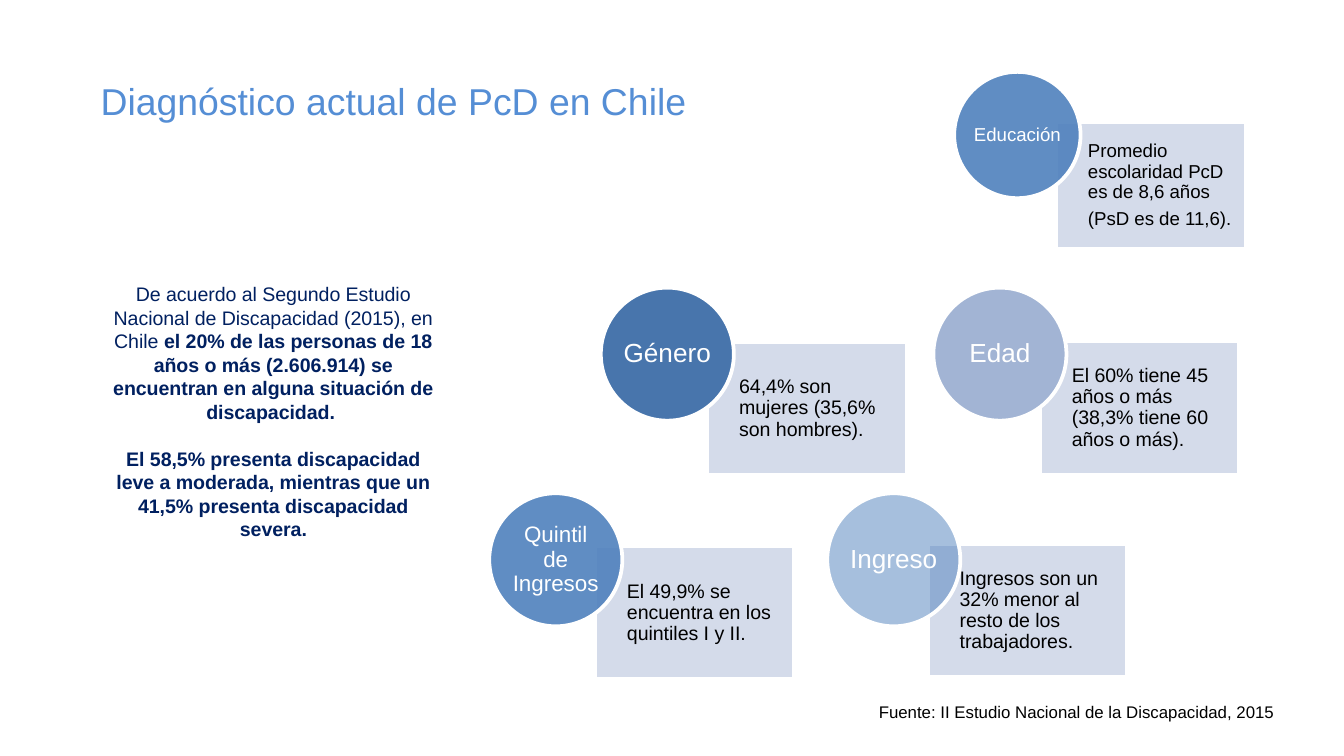
import dataclasses

import lxml.etree
import pptx
import pptx.dml.color
import pptx.enum.shapes
import pptx.enum.text
import pptx.oxml.ns
import pptx.util

PX = 4572  # 200 px to the inch
ALIGN = pptx.enum.text.PP_ALIGN
ANCHOR = pptx.enum.text.MSO_ANCHOR
SHAPE = pptx.enum.shapes.MSO_SHAPE


@dataclasses.dataclass(frozen=True)
class Theme:
    font: str = "Arial"
    title: str = "558ED5"
    body: str = "002060"
    black: str = "000000"
    white: str = "FFFFFF"
    panel: str = "D0D8E8"
    blue: str = "4F81BD"
    dark_blue: str = "4875AC"
    grey_blue: str = "A2B4D4"
    title_size: float = 20
    body_size: float = 10.5
    large_size: float = 14
    medium_size: float = 12
    small_size: float = 10
    source_size: float = 9


theme = Theme()
deck = pptx.Presentation()
deck.slide_width, deck.slide_height = 2000 * PX, 1125 * PX
page = deck.slides.add_slide(deck.slide_layouts[6])


def write(box, paragraphs, size, color, align=ALIGN.LEFT, anchor=ANCHOR.TOP,
          margins=(20, 10, 20, 10), line=None, before=0, after=0):
    """Fill a box with paragraphs, each a list of (text, bold) spans."""
    frame = box.text_frame
    frame.word_wrap = True
    frame.vertical_anchor = anchor
    (frame.margin_left, frame.margin_top,
     frame.margin_right, frame.margin_bottom) = [m * PX for m in margins]
    for index, spans in enumerate(paragraphs):
        para = frame.add_paragraph() if index else frame.paragraphs[0]
        para.alignment = align
        para.line_spacing = line
        para.space_before = pptx.util.Pt(before if index else 0)
        para.space_after = pptx.util.Pt(after)
        for text, bold in spans:
            span = para.add_run()
            span.text = text
            span.font.name = theme.font
            span.font.size = pptx.util.Pt(size)
            span.font.bold = bold
            span.font.color.rgb = pptx.dml.color.RGBColor.from_string(color)


def add_outlined(kind, left, top, width, height, color, opacity):
    """Add a white-outlined shape; opacity is in percent."""
    shape = page.shapes.add_shape(kind, left * PX, top * PX, width * PX, height * PX)
    shape.shadow.inherit = False
    shape.fill.solid()
    shape.fill.fore_color.rgb = pptx.dml.color.RGBColor.from_string(color)
    if opacity < 100:
        tint = shape.fill._xPr.find(".//" + pptx.oxml.ns.qn("a:srgbClr"))
        alpha = lxml.etree.SubElement(tint, pptx.oxml.ns.qn("a:alpha"))
        alpha.set("val", str(opacity * 1000))
    shape.line.color.rgb = pptx.dml.color.RGBColor.from_string(theme.white)
    shape.line.width = pptx.util.Pt(2)
    return shape


title = page.shapes.add_textbox(130 * PX, 93 * PX, 1700 * PX, 88 * PX)
write(title, [[("Diagnóstico actual de PcD en Chile", False)]],
      size=theme.title_size, color=theme.title, anchor=ANCHOR.MIDDLE,
      line=pptx.util.Pt(33))

summary = page.shapes.add_textbox(142 * PX, 410 * PX, 530 * PX, 514 * PX)
write(summary, [
    [("De acuerdo al Segundo Estudio Nacional de Discapacidad (2015), en Chile ", False),
     ("el 20% de las personas de 18 años o más (2.606.914) se encuentran "
      "en alguna situación de discapacidad. ", True)],
    [("El 58,5% presenta discapacidad leve a moderada, mientras que un 41,5% "
      "presenta discapacidad severa.", True)],
], size=theme.body_size, color=theme.body, align=ALIGN.CENTER, before=12.6)

# label, label size, circle colour, opacity, circle place, diameter,
# panel place, panel width, panel text size, panel paragraphs
cards = [
    ("Género", theme.large_size, theme.dark_blue, 100, (894, 428), 198,
     (1053, 509), 296, theme.body_size, ["64,4% son mujeres (35,6% son hombres)."]),
    ("Edad", theme.large_size, theme.grey_blue, 100, (1389, 428), 198,
     (1548, 508), 296, theme.body_size,
     ["El 60% tiene 45 años o más (38,3% tiene 60 años o más)."]),
    ("Quintil de Ingresos", theme.medium_size, theme.blue, 90, (728, 734), 198,
     (886, 813), 296, theme.body_size,
     ["El 49,9% se encuentra en los quintiles I y II."]),
    ("Ingreso", theme.large_size, theme.blue, 50, (1231, 734), 198,
     (1381, 810), 296, theme.body_size,
     ["Ingresos son un 32% menor al resto de los trabajadores."]),
    ("Educación", theme.small_size, theme.blue, 90, (1420, 107), 188,
     (1572, 182), 282, theme.small_size,
     ["Promedio escolaridad PcD es de 8,6 años", "(PsD es de 11,6)."]),
]
for (label, label_size, color, opacity, circle_at, diameter,
     panel_at, panel_width, text_size, texts) in cards:
    panel = add_outlined(SHAPE.RECTANGLE, *panel_at, panel_width, diameter,
                         theme.panel, 90)
    write(panel, [[(text, False)] for text in texts], size=text_size,
          color=theme.black, anchor=ANCHOR.MIDDLE, margins=(47, 18, 17, 18),
          line=0.9, after=3.5)
    circle = add_outlined(SHAPE.OVAL, *circle_at, diameter, diameter, color, opacity)
    write(circle, [[(label, False)]], size=label_size, color=theme.white,
          align=ALIGN.CENTER, anchor=ANCHOR.MIDDLE, margins=(0, 0, 0, 0), line=0.9)

source = page.shapes.add_textbox(1288 * PX, 1034 * PX, 696 * PX, 50 * PX)
write(source, [[("Fuente: II Estudio Nacional de la Discapacidad, 2015", False)]],
      size=theme.source_size, color=theme.black)

deck.save("out.pptx")
